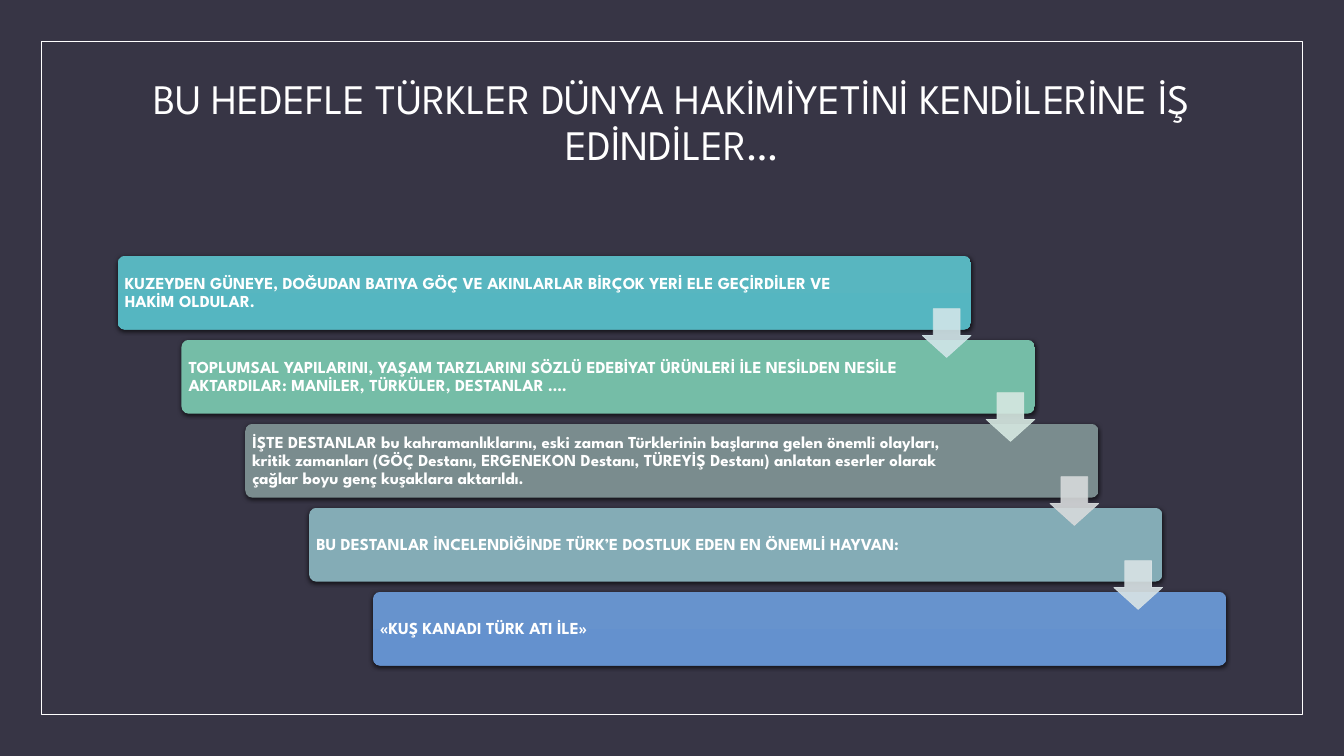
from dataclasses import dataclass

from lxml import etree
from pptx import Presentation
from pptx import util as u
from pptx.dml.color import RGBColor
from pptx.enum import shapes, text
from pptx.oxml import ns

COLUMNS, ROWS = 160, 90


@dataclass(frozen=True)
class Theme:
    background: str = "373545"
    light: str = "FFFFFF"
    shadow: str = "000000"
    font: str = "League Spartan"
    title_size: float = 30
    card_size: float = 12
    hairline: float = 0.5
    # top of card, bottom of card, arrow leaving the card
    steps: tuple = (
        ("58B6C0", "55B6C1", "D1E5E8"),
        ("75BDA7", "72BDA6", "D6E8E1"),
        ("7A8C8E", "788B8D", "D7DADB"),
        ("84ACB6", "82ABB6", "D9E3E5"),
        ("6793CD", "6491CE", None),
    )


TITLE = "BU HEDEFLE TÜRKLER DÜNYA HAKİMİYETİNİ KENDİLERİNE İŞ EDİNDİLER…"
STEPS = (
    "KUZEYDEN GÜNEYE, DOĞUDAN BATIYA GÖÇ VE AKINLARLAR BİRÇOK YERİ ELE GEÇİRDİLER VE HAKİM OLDULAR.",
    "TOPLUMSAL YAPILARINI, YAŞAM TARZLARINI SÖZLÜ EDEBİYAT ÜRÜNLERİ İLE NESİLDEN NESİLE "
    "AKTARDILAR: MANİLER, TÜRKÜLER, DESTANLAR ….",
    "İŞTE DESTANLAR bu kahramanlıklarını, eski zaman Türklerinin başlarına gelen önemli olayları, "
    "kritik zamanları (GÖÇ Destanı, ERGENEKON Destanı, TÜREYİŞ Destanı) anlatan eserler olarak "
    "çağlar boyu genç kuşaklara aktarıldı.",
    "BU DESTANLAR İNCELENDİĞİNDE TÜRK’E DOSTLUK EDEN EN ÖNEMLİ HAYVAN:",
    "«KUŞ KANADI TÜRK ATI İLE»",
)


def rgb(color):
    return RGBColor.from_string(color)


class StairSlide:
    def __init__(self, presentation, theme):
        self.theme = theme
        self.column = presentation.slide_width / COLUMNS
        self.row = presentation.slide_height / ROWS
        self.slide = presentation.slides.add_slide(presentation.slide_layouts[6])
        self.slide.background.fill.solid()
        self.slide.background.fill.fore_color.rgb = rgb(theme.background)

    def place(self, left, top, width, height):
        """Turn columns and rows into slide lengths."""
        return (u.Emu(round(left * self.column)), u.Emu(round(top * self.row)),
                u.Emu(round(width * self.column)), u.Emu(round(height * self.row)))

    def shape(self, kind, box, adjustments=()):
        shape = self.slide.shapes.add_shape(kind, *self.place(*box))
        shape.shadow.inherit = False
        for index, value in enumerate(adjustments):
            shape.adjustments[index] = value
        return shape

    def set_words(self, frame, words, size, anchor, alignment, margins, bold=False):
        frame.word_wrap = True
        frame.vertical_anchor = anchor
        frame.margin_left, frame.margin_top, frame.margin_right, frame.margin_bottom = map(u.Inches, margins)
        frame.text = words
        paragraph = frame.paragraphs[0]
        paragraph.alignment = alignment
        paragraph.line_spacing = 0.9
        font = paragraph.runs[0].font
        font.name, font.size, font.bold = self.theme.font, u.Pt(size), bold
        font.color.rgb = rgb(self.theme.light)

    def frame(self, box):
        frame = self.shape(shapes.MSO_SHAPE.RECTANGLE, box)
        frame.fill.background()
        frame.line.color.rgb = rgb(self.theme.light)
        frame.line.width = u.Pt(self.theme.hairline)

    def title(self, words, box):
        title = self.slide.shapes.add_textbox(*self.place(*box))
        self.set_words(title.text_frame, words, self.theme.title_size, text.MSO_ANCHOR.TOP,
                       text.PP_ALIGN.CENTER, (0.1, 0.08, 0.1, 0.05))

    def card(self, words, box, colors):
        card = self.shape(shapes.MSO_SHAPE.ROUNDED_RECTANGLE, box, [0.1])
        card.line.fill.background()
        card.fill.gradient()
        card.fill.gradient_angle = 270
        for stop, color in zip(card.fill.gradient_stops, colors):
            stop.color.rgb = rgb(color)
        self.drop_shadow(card)
        self.set_words(card.text_frame, words, self.theme.card_size, text.MSO_ANCHOR.MIDDLE,
                       text.PP_ALIGN.LEFT, (0.05, 0.05, 1.16, 0.05), bold=True)

    def drop_shadow(self, shape):
        effects = shape.element.spPr.find(ns.qn("a:effectLst"))
        shadow = etree.SubElement(effects, ns.qn("a:outerShdw"), blurRad=str(u.Pt(3)),
                                  dist=str(u.Pt(1)), dir="5400000", rotWithShape="0")
        color = etree.SubElement(shadow, ns.qn("a:srgbClr"), val=self.theme.shadow)
        etree.SubElement(color, ns.qn("a:alpha"), val="63000")

    def arrow(self, box, color):
        arrow = self.shape(shapes.MSO_SHAPE.DOWN_ARROW, box, [0.55, 0.45])
        arrow.fill.solid()
        arrow.fill.fore_color.rgb = rgb(color)
        arrow.line.color.rgb = rgb(color)
        arrow.line.width = u.Pt(self.theme.hairline)
        for node in arrow.element.spPr.iter(ns.qn("a:srgbClr")):
            etree.SubElement(node, ns.qn("a:alpha"), val="90000")

    def staircase(self, steps, left, top, width, height, shift, drop):
        """Draw the cards going down to the right, then the arrows over them."""
        arrow_size = 5.8
        corners = [(left + i * shift, top + i * drop) for i in range(len(steps))]
        for words, (x, y), colors in zip(steps, corners, self.theme.steps):
            self.card(words, (x, y, width, height), colors[:2])
        for (x, y), colors in zip(corners[:-1], self.theme.steps):
            self.arrow((x + width - arrow_size, y + 6.3, arrow_size, arrow_size), colors[2])


def main():
    presentation = Presentation()
    presentation.slide_width, presentation.slide_height = u.Inches(13.33), u.Inches(7.5)
    slide = StairSlide(presentation, Theme())
    slide.frame((4.9, 4.9, 150.2, 80.2))
    slide.title(TITLE, (14, 8.4, 132, 18))
    slide.staircase(STEPS, left=14, top=30.45, width=101.6, height=8.8, shift=7.6, drop=10)
    presentation.save("out.pptx")


if __name__ == "__main__":
    main()
